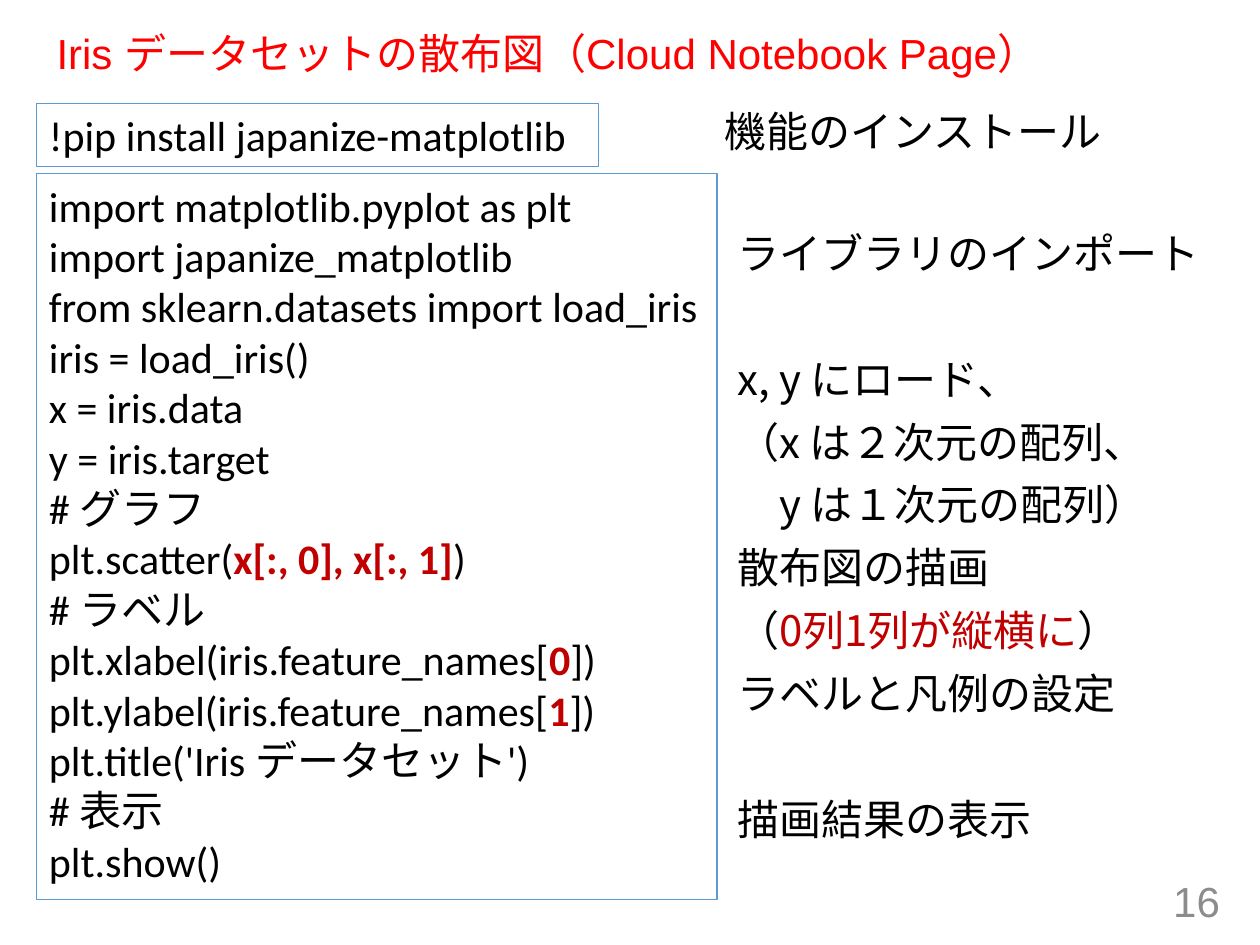
from lxml import etree
from pptx import Presentation
from pptx import util as u
from pptx.dml.color import RGBColor
from pptx.enum import shapes, text
from pptx.oxml.ns import qn

COLUMNS, ROWS = 100, 75
JAPANESE = "Noto Sans CJK JP"
MARK = "|"  # encloses the emphasised part of a line

CODE = [
    "import matplotlib.pyplot as plt\nimport japanize_matplotlib",
    "from sklearn.datasets import load_iris",
    "iris = load_iris()",
    "x = iris.data",
    "y = iris.target",
    "# グラフ",
    "plt.scatter(|x[:, 0], x[:, 1]|)",
    "# ラベル",
    "plt.xlabel(iris.feature_names[|0|])",
    "plt.ylabel(iris.feature_names[|1|])",
    "plt.title('Iris データセット')",
    "# 表示",
    "plt.show()",
]
NEXT, SKIP = 10, 46  # points before a note: next line, or one line left free
NOTES = [
    ("ライブラリのインポート", 0),
    ("x, y にロード、", SKIP),
    ("（x は２次元の配列、", NEXT),
    ("　y は１次元の配列）", NEXT),
    ("散布図の描画", NEXT),
    ("（|0列1列が縦横に|）", NEXT),
    ("ラベルと凡例の設定", NEXT),
    ("描画結果の表示", SKIP),
]


def color(value):
    return RGBColor.from_string(value)


def assign(target, values):
    for name, value in values.items():
        setattr(target, name, value)


class Board:
    """Slide with one text size, measured in columns and rows."""

    size = u.Pt(24)
    emphasis = "C00000"
    border = "5B9BD5"

    def __init__(self, deck):
        self.page = deck.slides.add_slide(deck.slide_layouts[6])
        self.column = deck.slide_width / COLUMNS
        self.row = deck.slide_height / ROWS

    def place(self, left, top, width, height):
        return (round(left * self.column), round(top * self.row),
                round(width * self.column), round(height * self.row))

    def add_line(self, para, line, font, ink, bold):
        for index, part in enumerate(line.split(MARK)):
            marked = index % 2 == 1
            for number, piece in enumerate(part.split("\n")):
                if number:
                    para.add_line_break()
                span = para.add_run()
                span.text = piece
                assign(span.font, {"size": self.size, "name": font, "bold": marked and bold})
                span.font.color.rgb = color(self.emphasis if marked else ink)
                east = etree.SubElement(span.font._element, qn("a:ea"))
                east.set("typeface", JAPANESE)

    def fill(self, shape, lines, font, ink="000000", bold=False, frame=None, form=None):
        """Add (line, points before) pairs; frame and form hold format values."""
        box = shape.text_frame
        assign(box, {"word_wrap": True, **(frame or {})})
        for index, (line, gap) in enumerate(lines):
            para = box.add_paragraph() if index else box.paragraphs[0]
            assign(para, {"alignment": text.PP_ALIGN.LEFT, **(form or {})})
            if gap:
                para.space_before = u.Pt(gap)
            self.add_line(para, line, font, ink, bold)

    def label(self, place, line, ink, **form):
        shape = self.page.shapes.add_textbox(*self.place(*place))
        self.fill(shape, [(line, 0)], "Arial", ink,
                  frame={"vertical_anchor": text.MSO_ANCHOR.MIDDLE}, form=form)

    def code(self, place, lines, wrap=True):
        shape = self.page.shapes.add_shape(shapes.MSO_SHAPE.RECTANGLE, *self.place(*place))
        shape.shadow.inherit = False
        shape.fill.background()
        shape.line.color.rgb = color(self.border)
        shape.line.width = u.Pt(0.75)
        frame = {"word_wrap": wrap, "vertical_anchor": text.MSO_ANCHOR.TOP,
                 "auto_size": text.MSO_AUTO_SIZE.SHAPE_TO_FIT_TEXT}
        self.fill(shape, [(line, 0) for line in lines], "Calibri", bold=True, frame=frame)

    def notes(self, place, lines):
        shape = self.page.shapes.add_textbox(*self.place(*place))
        side, edge = u.Inches(0.07), u.Inches(0.04)
        frame = {"margin_left": side, "margin_right": side,
                 "margin_top": edge, "margin_bottom": edge}
        self.fill(shape, lines, JAPANESE, frame=frame, form={"line_spacing": 0.9})


def main():
    deck = Presentation()
    deck.slide_width, deck.slide_height = u.Inches(10), u.Inches(7.5)
    board = Board(deck)
    board.label((3.5, 1.9, 92.5, 5.1), "Iris データセットの散布図（Cloud Notebook Page）",
                "FF0000", line_spacing=0.9)
    board.label((75.3, 69.5, 22.5, 4), "16", "8C8C8C", alignment=text.PP_ALIGN.RIGHT)
    board.code((2.9, 8.2, 44.6, 5), ["!pip install japanize-matplotlib"])
    board.code((2.9, 13.8, 54, 57.6), CODE, wrap=False)
    board.notes((56.8, 8.4, 35.9, 4.8), [("機能のインストール", 0)])
    board.notes((57.8, 18.1, 38.2, 4.8), NOTES)
    deck.save("out.pptx")


if __name__ == "__main__":
    main()
